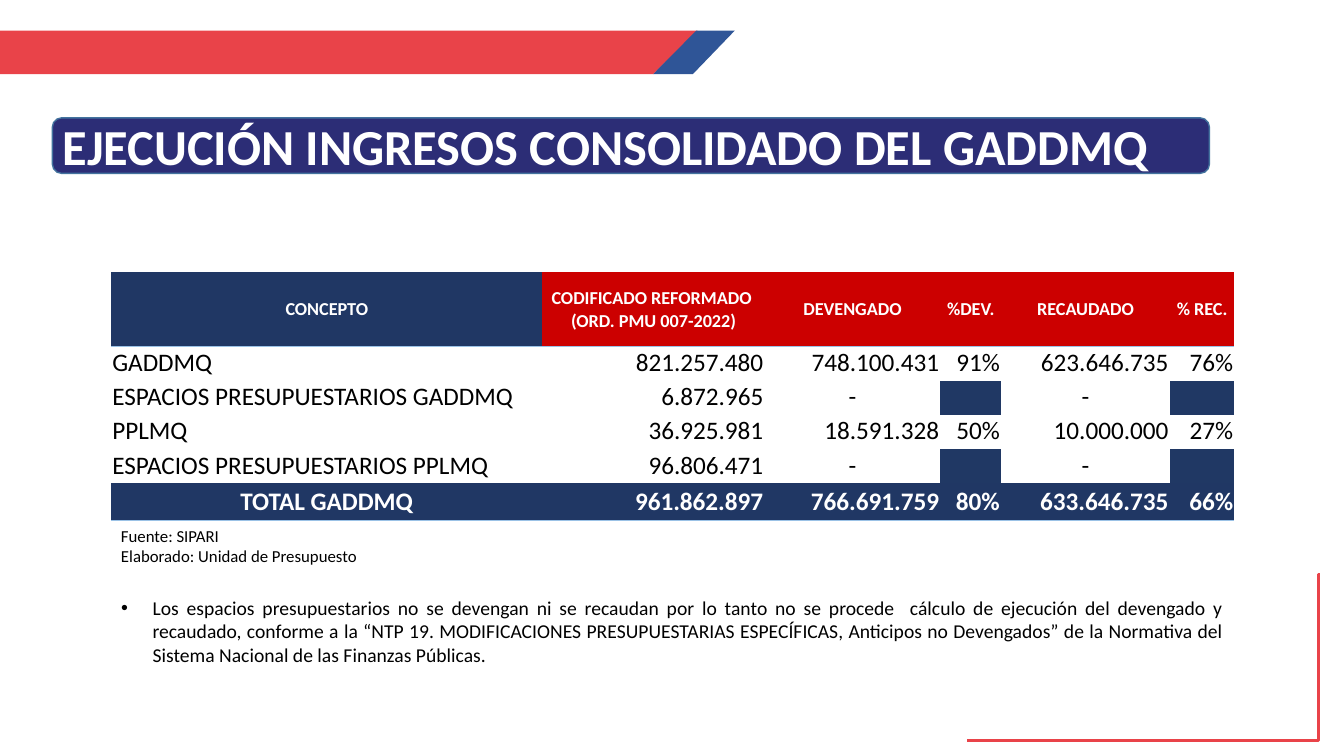
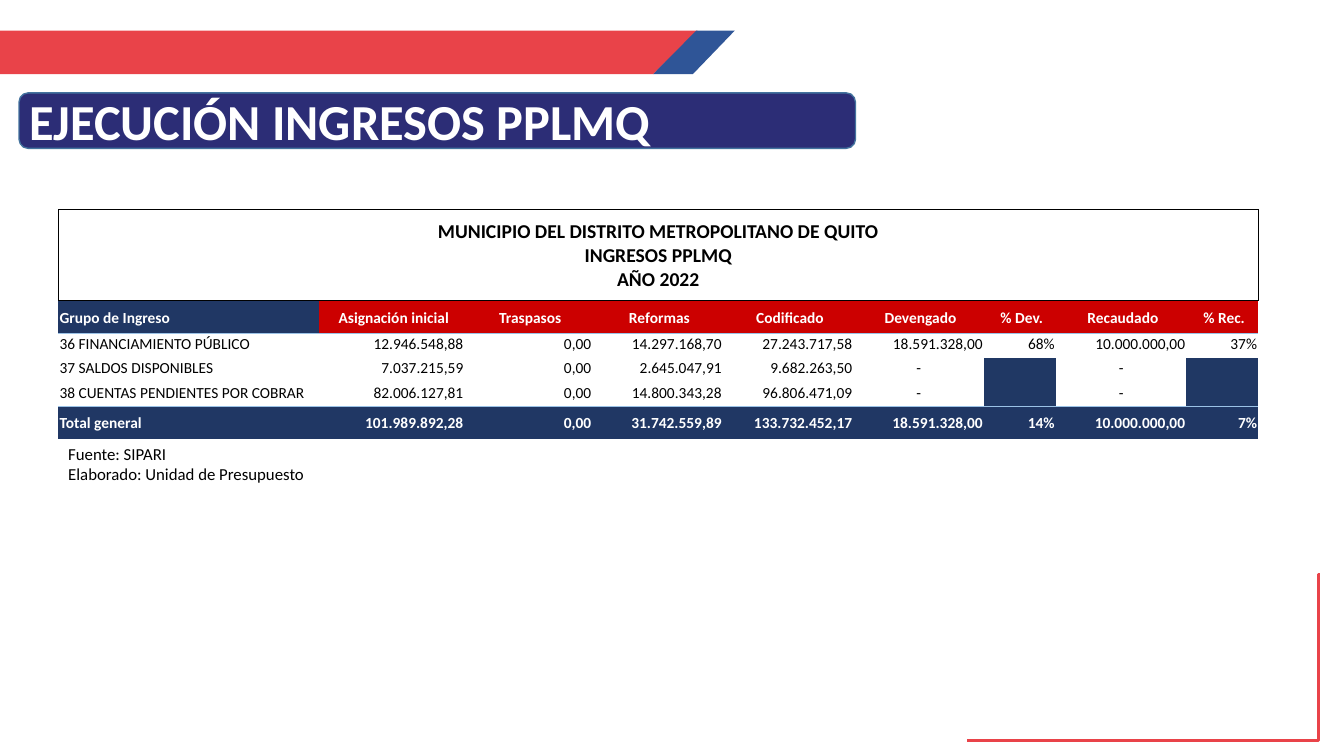
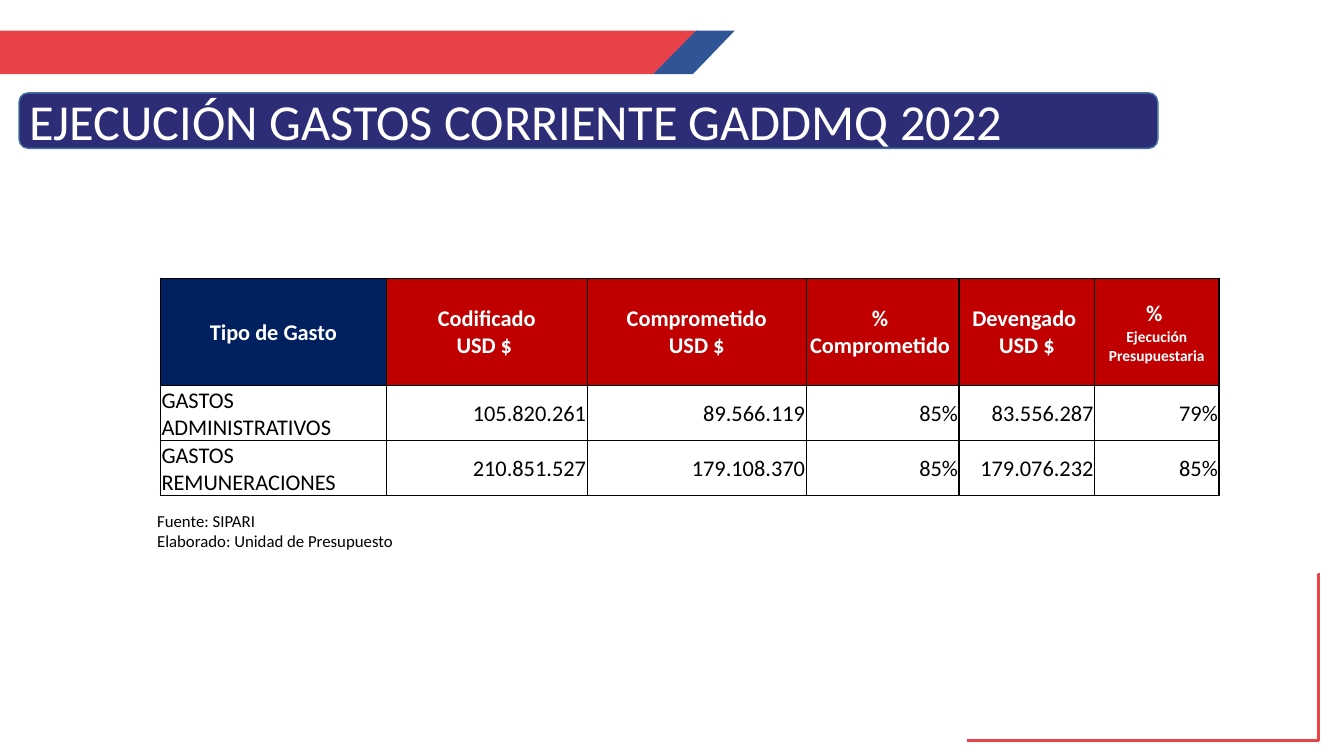
from dataclasses import dataclass, field, replace

import pptx
import pptx.util
import pptx.dml.color
import pptx.enum.shapes
import pptx.enum.text
import pptx.oxml.ns
from lxml import etree

Cm = pptx.util.Cm
Pt = pptx.util.Pt
RGBColor = pptx.dml.color.RGBColor
MSO_SHAPE = pptx.enum.shapes.MSO_SHAPE
MSO_ANCHOR = pptx.enum.text.MSO_ANCHOR
MSO_AUTO_SIZE = pptx.enum.text.MSO_AUTO_SIZE
PP_ALIGN = pptx.enum.text.PP_ALIGN
qn = pptx.oxml.ns.qn

FONT = "Calibri"
WHITE = RGBColor(0xFF, 0xFF, 0xFF)
BLACK = RGBColor(0x00, 0x00, 0x00)
CORAL = RGBColor(0xE9, 0x43, 0x49)
BLUE = RGBColor(0x2F, 0x55, 0x97)
INDIGO = RGBColor(0x2C, 0x2D, 0x76)
STEEL = RGBColor(0x43, 0x73, 0x9E)
SKY = RGBColor(0x9B, 0xC2, 0xE6)
NAVY = RGBColor(0x20, 0x37, 0x64)
BLANK_NAVY = RGBColor(0x20, 0x38, 0x64)
DEEP_NAVY = RGBColor(0x00, 0x20, 0x60)
RED = RGBColor(0xCC, 0x00, 0x00)
DARK_RED = RGBColor(0xC0, 0x00, 0x00)

PLAIN_TABLE_STYLE = "{2D5ABB26-0587-4C30-8999-92F81FD0307C}"
TITLE_AND_CONTENT, TITLE_ONLY = 1, 5
TITLE_HEIGHT = 1.4
SOURCE_NOTE = "Fuente: SIPARI\nElaborado: Unidad de Presupuesto"


@dataclass
class RowStyle:
    """Look of a table row; edges maps a side (L, R, T, B) to colour and points."""
    size: float
    color: RGBColor = BLACK
    bold: bool = False
    first_fill: RGBColor = None
    fill: RGBColor = None
    anchor: MSO_ANCHOR = MSO_ANCHOR.MIDDLE
    first_align: PP_ALIGN = PP_ALIGN.LEFT
    align: PP_ALIGN = PP_ALIGN.RIGHT
    edges: dict = field(default_factory=dict)


def box_of(left, top, width, height):
    return [Cm(length) for length in (left, top, width, height)]


def format_text(frame, size, color, bold=False, align=PP_ALIGN.LEFT):
    for para in frame.paragraphs:
        para.alignment = align
        for span in para.runs:
            span.font.name = FONT
            span.font.size = Pt(size)
            span.font.bold = bold
            span.font.color.rgb = color


def add_band(page, points, color):
    corners = [(Cm(x), Cm(y)) for x, y in points]
    builder = page.shapes.build_freeform(*corners[0], scale=1.0)
    builder.add_line_segments(corners[1:], close=True)
    band = builder.convert_to_shape()
    band.shadow.inherit = False
    band.fill.solid()
    band.fill.fore_color.rgb = color
    band.line.fill.background()
    return band


def add_corner_line(page):
    line = page.shapes.add_connector(
        pptx.enum.shapes.MSO_CONNECTOR.ELBOW,
        Cm(24.38), Cm(18.67), Cm(33.27), Cm(14.48))
    line.line.color.rgb = CORAL
    line.line.width = Pt(2.25)
    properties = line.element.spPr
    guides = properties.find(qn("a:prstGeom")).get_or_add_avLst()
    etree.SubElement(guides, qn("a:gd"), name="adj1", fmla="val 99600")
    etree.SubElement(properties, qn("a:effectLst"))
    return line


def decorate_master(deck, page):
    """Draw the shared bands on a page, then move them to the slide master."""
    top, bottom = 0.77, 1.87
    parts = [
        add_band(page, [(0, top), (17.58, top), (16.46, bottom), (0, bottom)], CORAL),
        add_band(page, [(17.55, top), (18.52, top), (17.46, bottom), (16.46, bottom)], BLUE),
        add_corner_line(page),
    ]
    for number, part in enumerate(parts, start=20):
        part.element.xpath(".//p:cNvPr")[0].set("id", str(number))
        deck.slide_master.shapes.element.append(part.element)


def add_title(page, text, left, top, width, bold=True):
    box = box_of(left, top, width, TITLE_HEIGHT)
    plate = page.shapes.add_shape(MSO_SHAPE.FLOWCHART_ALTERNATE_PROCESS, *box)
    plate.shadow.inherit = False
    plate.fill.solid()
    plate.fill.fore_color.rgb = INDIGO
    plate.line.color.rgb = STEEL
    plate.line.width = Pt(1)

    title = page.shapes.title
    title.left, title.top, title.width, title.height = box
    page.shapes.element.append(title.element)
    frame = title.text_frame
    frame.text = text
    frame.auto_size = MSO_AUTO_SIZE.NONE
    frame.vertical_anchor = MSO_ANCHOR.MIDDLE
    format_text(frame, 36, WHITE, bold)


def add_source_note(page, left, top):
    note = page.shapes.add_textbox(*box_of(left, top, 9, 1.28))
    note.text_frame.word_wrap = True
    note.text_frame.text = SOURCE_NOTE
    format_text(note.text_frame, 12, BLACK)


def fill_body(page, text, left, top, width, height):
    body = page.placeholders[1]
    body.left, body.top, body.width, body.height = box_of(left, top, width, height)
    frame = body.text_frame
    frame.text = text
    frame.auto_size = MSO_AUTO_SIZE.NONE
    para = frame.paragraphs[0]
    para.space_before = Pt(0)
    indent = Cm(0.79)
    properties = para._p.get_or_add_pPr()
    properties.set("marL", str(indent))
    properties.set("indent", str(-indent))
    format_text(frame, 14, BLACK, align=PP_ALIGN.JUSTIFY)


def set_edges(cell, edges):
    properties = cell._tc.get_or_add_tcPr()
    sides = [side for side in "LRTB" if side in edges]
    for position, side in enumerate(sides):
        color, points = edges[side]
        line = etree.Element(qn("a:ln" + side), w=str(Pt(points)))
        solid = etree.SubElement(line, qn("a:solidFill"))
        etree.SubElement(solid, qn("a:srgbClr"), val=str(color))
        properties.insert(position, line)


def format_cell(cell, text, style, is_first):
    cell.margin_left = cell.margin_right = cell.margin_top = Cm(0.03)
    cell.margin_bottom = 0
    cell.vertical_anchor = style.anchor
    fill = style.first_fill if is_first else style.fill
    align = style.first_align if is_first else style.align
    if text == "-":
        align = PP_ALIGN.CENTER
    if text:
        cell.text_frame.text = text
        format_text(cell.text_frame, style.size, style.color, style.bold, align)
    else:
        fill = fill or BLANK_NAVY
        etree.SubElement(cell.text_frame.paragraphs[0]._p, qn("a:endParaRPr"),
                         sz=str(int(style.size * 100)))
    if fill is None:
        cell.fill.background()
    else:
        cell.fill.solid()
        cell.fill.fore_color.rgb = fill
    set_edges(cell, style.edges)


def add_grid(page, left, top, widths, rows):
    """Add a table; each row is (height, style, texts), and a lone text spans it."""
    box = box_of(left, top, sum(widths), sum(row[0] for row in rows))
    table = page.shapes.add_table(len(rows), len(widths), *box).table
    table.first_row = table.horz_banding = False
    table._tbl.tblPr.find(qn("a:tableStyleId")).text = PLAIN_TABLE_STYLE
    for column, width in zip(table.columns, widths):
        column.width = Cm(width)
    for index, (height, style, texts) in enumerate(rows):
        table.rows[index].height = Cm(height)
        cells = [table.cell(index, number) for number in range(len(widths))]
        if len(texts) == 1:
            cells[0].merge(cells[-1])
            format_cell(cells[0], texts[0], style, True)
            for cell in cells[1:]:
                set_edges(cell, style.edges)
            continue
        for number, (cell, text) in enumerate(zip(cells, texts)):
            format_cell(cell, text, style, number == 0)
    return table


SKY_BELOW = {"B": (SKY, 0.5)}
HEADER = RowStyle(13, WHITE, True, NAVY, RED, first_align=PP_ALIGN.CENTER,
                  align=PP_ALIGN.CENTER, edges=SKY_BELOW)
BODY = RowStyle(18, anchor=MSO_ANCHOR.TOP)
TOTAL = RowStyle(18, WHITE, True, NAVY, NAVY)


def fill_consolidated_income(page):
    left, top = 2.8, 6.85
    add_title(page, "EJECUCIÓN INGRESOS CONSOLIDADO DEL GADDMQ", 1.32, 2.97, 29.16)
    add_source_note(page, left, 13.13)
    fill_body(
        page,
        "Los espacios presupuestarios no se devengan ni se recaudan por lo tanto no se "
        "procede  cálculo de ejecución del devengado y recaudado, conforme a la “NTP 19. "
        "MODIFICACIONES PRESUPUESTARIAS ESPECÍFICAS, Anticipos no Devengados” de la "
        "Normativa del Sistema Nacional de las Finanzas Públicas.",
        left, 14.88, 28.3, 2.64)
    total = replace(TOTAL, first_align=PP_ALIGN.CENTER, edges=SKY_BELOW)
    add_grid(page, left, top, [10.87, 5.6, 4.43, 1.53, 4.25, 1.63], [
        (1.88, HEADER, ["CONCEPTO", "CODIFICADO REFORMADO \n(ORD. PMU 007-2022)",
                        "DEVENGADO", "%DEV.", "RECAUDADO", "% REC."]),
        (0.86, BODY, ["GADDMQ", "821.257.480", "748.100.431", "91%", "623.646.735", "76%"]),
        (0.86, BODY, ["ESPACIOS PRESUPUESTARIOS GADDMQ", "6.872.965", "-", "", "-", ""]),
        (0.86, BODY, ["PPLMQ", "36.925.981", "18.591.328", "50%", "10.000.000", "27%"]),
        (0.86, BODY, ["ESPACIOS PRESUPUESTARIOS PPLMQ", "96.806.471", "-", "", "-", ""]),
        (0.94, total, ["TOTAL GADDMQ", "961.862.897", "766.691.759", "80%",
                       "633.646.735", "66%"]),
    ])


def fill_pplmq_income(page):
    left, top = 1.47, 5.28
    add_title(page, "EJECUCIÓN INGRESOS PPLMQ", 0.48, 2.34, 21.08)
    add_source_note(page, left, 11.05)
    thin_black = (BLACK, 0.5)
    heading = RowStyle(14, bold=True, first_align=PP_ALIGN.CENTER,
                       edges=dict.fromkeys("LRTB", thin_black))
    header = replace(HEADER, size=11, first_align=PP_ALIGN.LEFT,
                     edges={"T": thin_black, **SKY_BELOW})
    body = replace(BODY, size=11)
    last_body = replace(body, edges=SKY_BELOW)
    total = replace(TOTAL, size=11)
    widths = [6.58, 3.66, 3.22, 3.29, 3.29, 3.29, 1.81, 3.29, 1.81]
    add_grid(page, left, top, widths, [
        (2.3, heading, ["MUNICIPIO DEL DISTRITO METROPOLITANO DE QUITO\n"
                        "INGRESOS PPLMQ\nAÑO 2022"]),
        (0.83, header, ["Grupo de Ingreso", " Asignación inicial", " Traspasos", " Reformas",
                        " Codificado", " Devengado", " % Dev.", " Recaudado", " % Rec."]),
        (0.61, body, ["36 FINANCIAMIENTO PÚBLICO", "12.946.548,88", "0,00", "14.297.168,70",
                      "27.243.717,58", "18.591.328,00", "68%", "10.000.000,00", "37%"]),
        (0.61, body, ["37 SALDOS DISPONIBLES", "7.037.215,59", "0,00", "2.645.047,91",
                      "9.682.263,50", "-", "", "-", ""]),
        (0.61, last_body, ["38 CUENTAS PENDIENTES POR COBRAR", "82.006.127,81", "0,00",
                           "14.800.343,28", "96.806.471,09", "-", "", "-", ""]),
        (0.82, total, ["Total general", "101.989.892,28", "0,00", "31.742.559,89",
                       "133.732.452,17", "18.591.328,00", "14%", "10.000.000,00", "7%"]),
    ])


def fill_current_expenses(page):
    add_title(page, "EJECUCIÓN GASTOS CORRIENTE GADDMQ 2022", 0.48, 2.34, 28.7, bold=False)
    add_source_note(page, 3.71, 12.75)
    frame_edges = dict.fromkeys("LRTB", (BLACK, 1))
    header = replace(HEADER, size=16, first_fill=DEEP_NAVY, fill=DARK_RED, edges=frame_edges)
    body = RowStyle(16, edges=frame_edges)
    table = add_grid(page, 4.04, 7.01, [5.7, 5.06, 5.52, 3.85, 3.42, 3.13], [
        (2.71, header, ["Tipo de Gasto", " Codificado \nUSD $ ", " Comprometido \nUSD $",
                        "% \nComprometido ", "Devengado \nUSD $",
                        "% \nEjecución Presupuestaria"]),
        (1.38, body, ["GASTOS ADMINISTRATIVOS", "105.820.261", "89.566.119", "85%",
                      "83.556.287", "79%"]),
        (1.38, body, ["GASTOS REMUNERACIONES", "210.851.527", "179.108.370", "85%",
                      "179.076.232", "85%"]),
    ])
    execution_label = table.cell(0, 5).text_frame.paragraphs[1]
    execution_label.runs[0].font.size = Pt(11)


def main():
    deck = pptx.Presentation()
    deck.slide_width, deck.slide_height = Cm(33.87), Cm(19.05)
    plan = [
        (TITLE_AND_CONTENT, fill_consolidated_income),
        (TITLE_ONLY, fill_pplmq_income),
        (TITLE_ONLY, fill_current_expenses),
    ]
    for number, (layout, fill_page) in enumerate(plan):
        page = deck.slides.add_slide(deck.slide_layouts[layout])
        if number == 0:
            decorate_master(deck, page)
        fill_page(page)
    deck.save("out.pptx")


if __name__ == "__main__":
    main()
